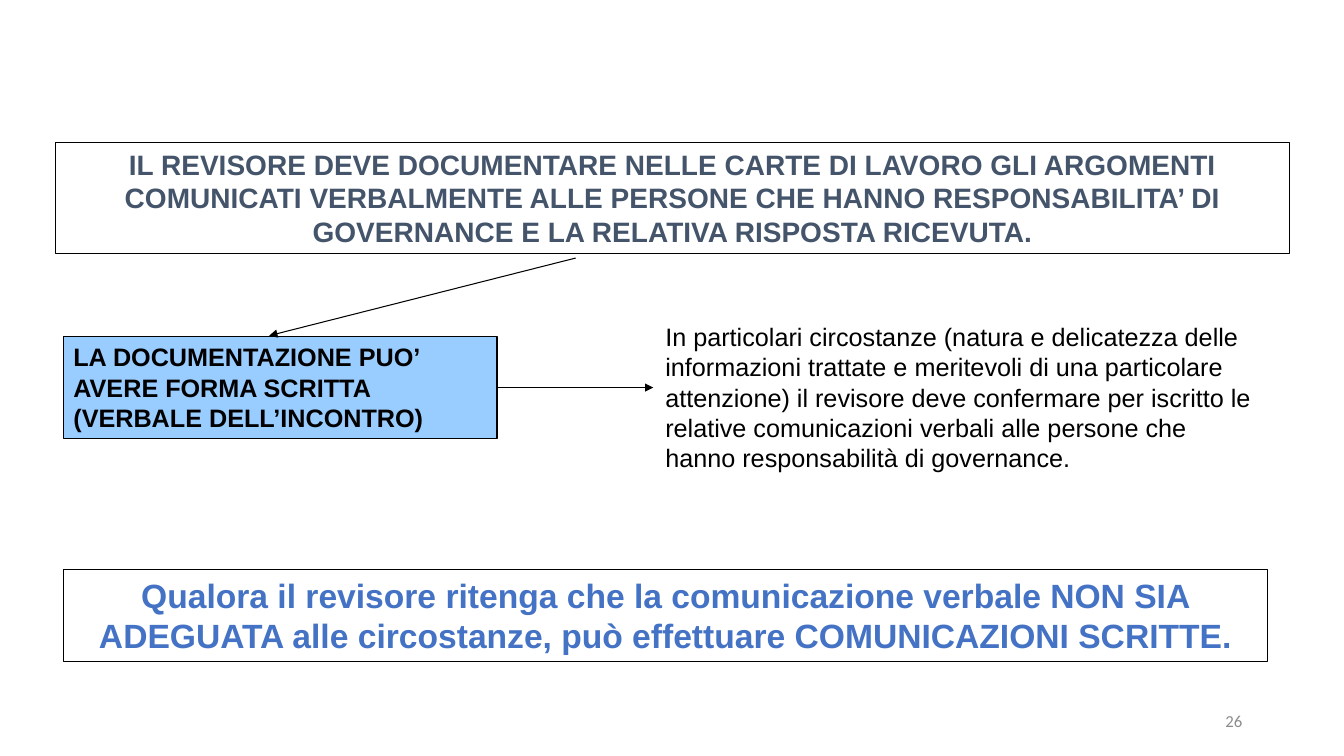
import pptx
import pptx.util
import pptx.dml.color
import pptx.enum.shapes
import pptx.enum.text
import pptx.oxml
import pptx.oxml.ns
from lxml import etree

Inches = pptx.util.Inches
RGBColor = pptx.dml.color.RGBColor
ALIGN = pptx.enum.text.PP_ALIGN
ANCHOR = pptx.enum.text.MSO_ANCHOR
FIT = pptx.enum.text.MSO_AUTO_SIZE

BLACK = RGBColor(0x00, 0x00, 0x00)
SLATE = RGBColor(0x44, 0x54, 0x6A)
BLUE = RGBColor(0x44, 0x72, 0xC4)
LIGHT_BLUE = RGBColor(0x99, 0xCC, 0xFF)
GREY = RGBColor(0x8C, 0x8C, 0x8C)

OBLIGATION = (
    "IL REVISORE DEVE DOCUMENTARE NELLE CARTE DI LAVORO GLI ARGOMENTI "
    "COMUNICATI VERBALMENTE ALLE PERSONE CHE HANNO RESPONSABILITA’ DI "
    "GOVERNANCE E LA RELATIVA RISPOSTA RICEVUTA."
)
WRITTEN_FORM = "LA DOCUMENTAZIONE PUO’ AVERE FORMA SCRITTA (VERBALE DELL’INCONTRO)"
CIRCUMSTANCES = (
    "In particolari circostanze (natura e delicatezza delle informazioni "
    "trattate e meritevoli di una particolare attenzione) il revisore deve "
    "confermare per iscritto le relative comunicazioni verbali alle persone "
    "che hanno responsabilità di governance."
)
CONCLUSION = (
    "Qualora il revisore ritenga che la comunicazione verbale NON SIA "
    "ADEGUATA alle circostanze, può effettuare COMUNICAZIONI SCRITTE."
)


def write_text(shape, text, size, color, align, bold=False, font="Arial",
               anchor=ANCHOR.TOP, fit=FIT.SHAPE_TO_FIT_TEXT):
    frame = shape.text_frame
    frame.text = text
    frame.word_wrap = True
    frame.auto_size = fit
    frame.vertical_anchor = anchor
    paragraph = frame.paragraphs[0]
    paragraph.alignment = align
    run_font = paragraph.runs[0].font
    run_font.name = font
    run_font.size = pptx.util.Pt(size)
    run_font.bold = bold
    run_font.color.rgb = color


def add_box(slide, left, top, width, height, fill=None):
    box = slide.shapes.add_shape(
        pptx.enum.shapes.MSO_SHAPE.RECTANGLE,
        Inches(left), Inches(top), Inches(width), Inches(height))
    box.shadow.inherit = False
    if fill is None:
        box.fill.background()
    else:
        box.fill.solid()
        box.fill.fore_color.rgb = fill
    box.line.color.rgb = BLACK
    box.line.width = pptx.util.Pt(0.75)
    return box


def add_label(slide, left, top, width, height):
    return slide.shapes.add_textbox(
        Inches(left), Inches(top), Inches(width), Inches(height))


def add_arrow(slide, start_x, start_y, end_x, end_y):
    arrow = slide.shapes.add_connector(
        pptx.enum.shapes.MSO_CONNECTOR.STRAIGHT,
        Inches(start_x), Inches(start_y), Inches(end_x), Inches(end_y))
    arrow.line.color.rgb = BLACK
    arrow.line.width = pptx.util.Pt(0.75)
    qn = pptx.oxml.ns.qn
    properties = arrow.line._get_or_add_ln()
    etree.SubElement(properties, qn("a:tailEnd"), type="triangle")
    etree.SubElement(properties.getparent(), qn("a:effectLst"))
    return arrow


def main():
    presentation = pptx.Presentation()
    presentation.slide_width = Inches(13.33)
    presentation.slide_height = Inches(7.5)
    slide = presentation.slides.add_slide(presentation.slide_layouts[6])

    obligation = add_box(slide, 0.55, 1.41, 12.24, 1.11)
    write_text(obligation, OBLIGATION, 20, SLATE, ALIGN.CENTER, bold=True)

    written_form = add_box(slide, 0.63, 3.34, 4.3, 1.01, LIGHT_BLUE)
    write_text(written_form, WRITTEN_FORM, 18, BLACK, ALIGN.LEFT, bold=True)

    circumstances = add_label(slide, 6.5, 3.14, 6.11, 1.6)
    write_text(circumstances, CIRCUMSTANCES, 18, BLACK, ALIGN.LEFT)

    to_circumstances = add_arrow(slide, 4.93, 3.85, 6.48, 3.85)
    to_circumstances.begin_connect(written_form, 3)
    to_circumstances.end_y = to_circumstances.begin_y
    add_arrow(slide, 5.71, 2.56, 2.67, 3.33)

    conclusion = add_box(slide, 0.63, 5.65, 11.94, 0.91)
    write_text(conclusion, CONCLUSION, 24, BLUE, ALIGN.CENTER, bold=True)

    page_number = add_label(slide, 9.42, 6.95, 3, 0.4)
    write_text(page_number, "26", 12, GREY, ALIGN.RIGHT, font="Calibri",
               anchor=ANCHOR.MIDDLE, fit=FIT.NONE)

    presentation.save("out.pptx")


if __name__ == "__main__":
    main()
